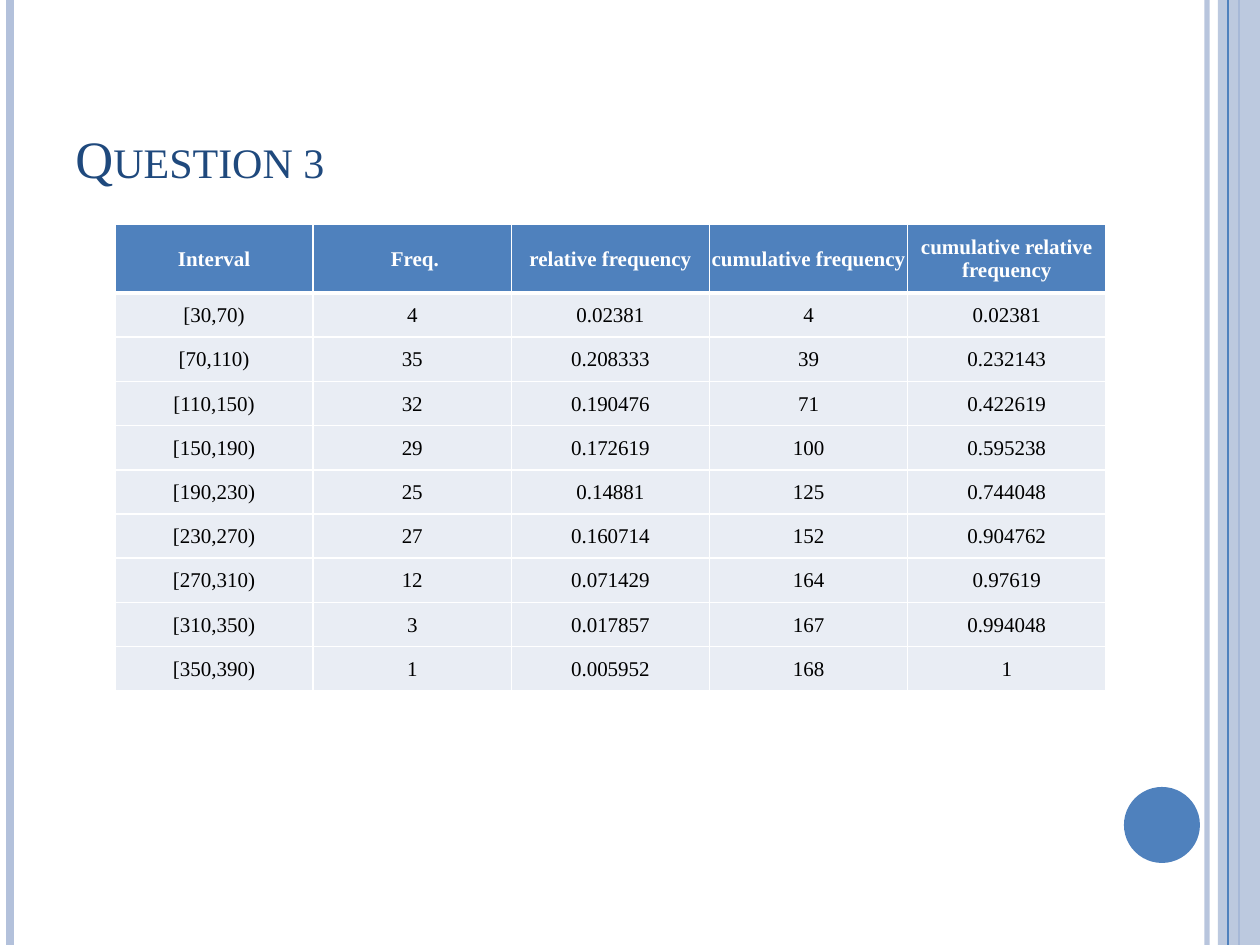
import itertools
import pptx
import pptx.dml.color
import pptx.enum.shapes
import pptx.enum.text
import pptx.oxml.ns
import pptx.util
from lxml import etree

SCALE = 914400 / 126
FONT = "Times New Roman"
WHITE, BLUE, PALE, NAVY, ROW_FILL = "FFFFFF", "4F81BD", "B3C1DB", "1F497D", "E9EDF4"
HEADINGS = ["Interval", " Freq.", "relative frequency", "cumulative frequency",
            "cumulative relative frequency"]
COUNTS = [4, 35, 32, 29, 25, 27, 12, 3, 1]
FIRST_BOUND, INTERVAL = 30, 40


def px(length):
    """Turn pixels into EMU."""
    return pptx.util.Emu(round(length * SCALE))


def paint(target, colour, alpha=100):
    """Give a fill a solid colour, with alpha in percent."""
    target.solid()
    target.fore_color.rgb = pptx.dml.color.RGBColor.from_string(colour)
    if alpha < 100:
        node = target._xPr.find(".//" + pptx.oxml.ns.qn("a:srgbClr"))
        etree.SubElement(node, pptx.oxml.ns.qn("a:alpha"), val=str(alpha * 1000))


def write(para, text, size, colour, bold=False):
    """Add a run of text to a paragraph and return it."""
    span = para.add_run()
    span.text = text
    span.font.name = FONT
    span.font.size = pptx.util.Pt(size)
    span.font.bold = bold
    paint(span.font.fill, colour)
    return span


def add_rule(page, x, height, colour, weight, alpha=100):
    """Draw a vertical line down the page."""
    rule = page.shapes.add_connector(
        pptx.enum.shapes.MSO_CONNECTOR.STRAIGHT, px(x), px(0), px(x), px(height))
    rule.line.width = pptx.util.Pt(weight)
    paint(rule.line.fill, colour, alpha)
    etree.SubElement(rule._element.spPr, pptx.oxml.ns.qn("a:effectLst"))


def add_plain_shape(page, kind, box, colour, alpha=100):
    """Draw a filled shape without outline."""
    shape = page.shapes.add_shape(kind, *map(px, box))
    shape.shadow.inherit = False
    shape.line.fill.background()
    paint(shape.fill, colour, alpha)


def add_frame(page, box):
    """Draw the side stripes and the page-number disc."""
    left, top, width, height = box
    right = left + width
    kinds = pptx.enum.shapes.MSO_SHAPE
    add_rule(page, right - 53, height, PALE, 3, 93)
    add_rule(page, left + 10, height, PALE, 4.5)
    add_rule(page, right - 21, height, BLUE, 1.5)
    add_plain_shape(page, kinds.RECTANGLE, (right - 42, top, 42, height), PALE, 87)
    add_rule(page, right - 32, height, BLUE, 0.75)
    add_plain_shape(page, kinds.OVAL, (right - 136, top + 787, 76, 76), BLUE)


def add_title(page, box, text):
    """Set the title in small capitals at the foot of its box."""
    frame = page.shapes.add_textbox(*map(px, box)).text_frame
    frame.word_wrap = True
    frame.vertical_anchor = pptx.enum.text.MSO_ANCHOR.BOTTOM
    span = write(frame.paragraphs[0], text, 30, NAVY)
    span.font._element.set("cap", "small")


def add_borders(cell, bottom):
    """Edge a cell in white, with its own bottom weight."""
    properties = cell._tc.get_or_add_tcPr()
    weights = {"a:lnL": 1, "a:lnR": 1, "a:lnT": 1, "a:lnB": bottom}
    for place, (tag, weight) in enumerate(weights.items()):
        edge = etree.Element(pptx.oxml.ns.qn(tag), w=str(pptx.util.Pt(weight)))
        fill = etree.SubElement(edge, pptx.oxml.ns.qn("a:solidFill"))
        etree.SubElement(fill, pptx.oxml.ns.qn("a:srgbClr"), val=WHITE)
        properties.insert(place, edge)


def fill_cell(cell, text, header, bottom):
    """Write and style one table cell."""
    cell.margin_left = cell.margin_right = cell.margin_top = px(1)
    cell.margin_bottom = 0
    cell.vertical_anchor = pptx.enum.text.MSO_ANCHOR.MIDDLE
    paint(cell.fill, BLUE if header else ROW_FILL)
    add_borders(cell, bottom)
    para = cell.text_frame.paragraphs[0]
    para.alignment = pptx.enum.text.PP_ALIGN.CENTER
    write(para, text, 12, WHITE if header else "000000", header)


def frequency_rows():
    """Work out the table's rows from the counts."""
    total = sum(COUNTS)
    rows = [HEADINGS]
    for index, (count, running) in enumerate(zip(COUNTS, itertools.accumulate(COUNTS))):
        start = FIRST_BOUND + index * INTERVAL
        rows.append([f"[{start},{start + INTERVAL})", str(count),
                     f"{round(count / total, 6):g}", str(running),
                     f"{round(running / total, 6):g}"])
    return rows


def add_frequency_table(page, box, header_height):
    """Place the frequency table in its box."""
    rows = frequency_rows()
    width, height = box[2:]
    table = page.shapes.add_table(len(rows), len(HEADINGS), *map(px, box)).table
    for column in table.columns:
        column.width = px(width / len(HEADINGS))
    for index, texts in enumerate(rows):
        header = index == 0
        body_height = (height - header_height) / len(COUNTS)
        table.rows[index].height = px(header_height if header else body_height)
        for column, text in enumerate(texts):
            fill_cell(table.cell(index, column), text, header, 3 if header else 1)
            if index == 1:
                edge = table.cell(1, column)._tc.tcPr.find(pptx.oxml.ns.qn("a:lnT"))
                edge.set("w", str(pptx.util.Pt(3)))


def main():
    """Build the deck and save it."""
    deck = pptx.Presentation()
    deck.slide_width, deck.slide_height = px(1260), px(945)
    page = deck.slides.add_slide(deck.slide_layouts[6])
    paint(page.background.fill, WHITE)
    add_frame(page, (0, 0, 1260, 945))
    add_title(page, (63, 38, 1029, 157), "Question 3")
    add_frequency_table(page, (115, 224, 991, 467), 69)
    deck.save("out.pptx")


if __name__ == "__main__":
    main()
